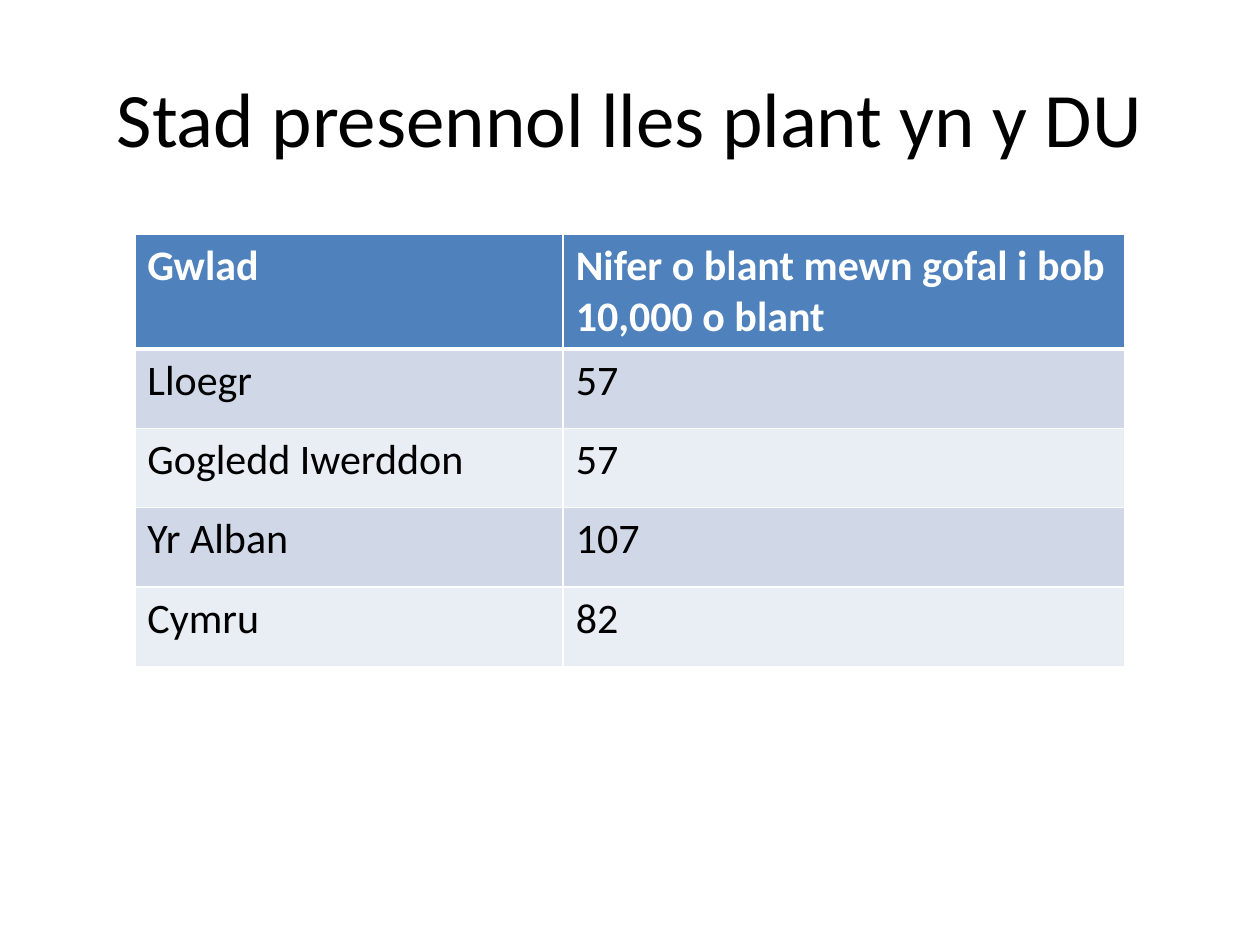
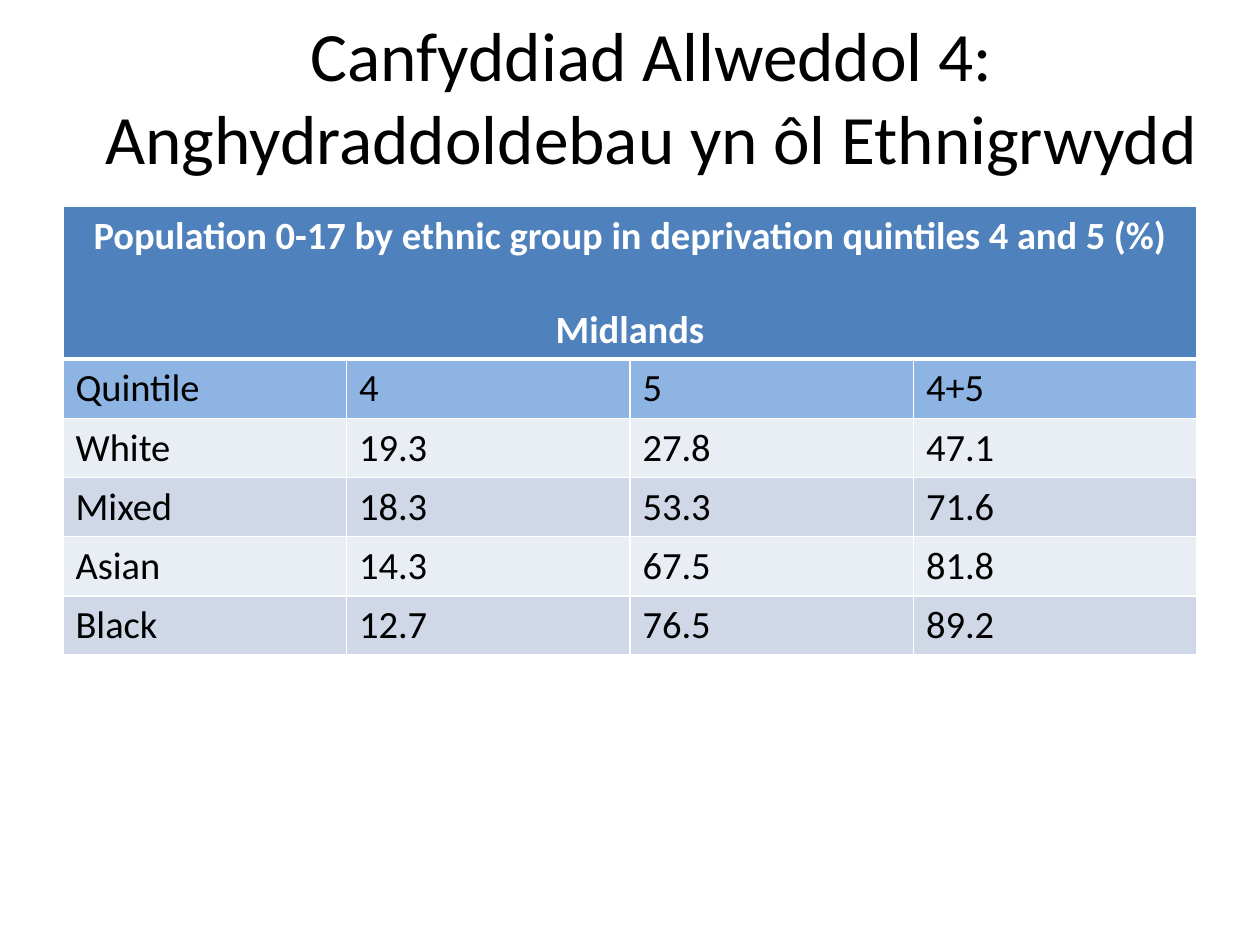
"""Build two slides that each hold a title and a banded table."""
import pptx
import pptx.dml.color
import pptx.enum.text
import pptx.util
from lxml import etree
from pptx.oxml.ns import qn

Inches = pptx.util.Inches
Pt = pptx.util.Pt
ALIGN = pptx.enum.text.PP_ALIGN
FONT = "Calibri"
HUES = {
    "text": "000000",
    "white": "FFFFFF",
    "head": "4F81BD",
    "sub": "8EB4E3",
    "dark": "D0D8E8",
    "light": "E9EDF4",
}


def color(name):
    return pptx.dml.color.RGBColor.from_string(HUES[name])


def add_run(para, text, size, hue="text", bold=False):
    run = para.add_run()
    run.text = text
    run.font.name = FONT
    run.font.size = Pt(size)
    run.font.bold = bold
    run.font.color.rgb = color(hue)


def add_title(slide, text, left, top, size):
    box = slide.shapes.add_textbox(Inches(left), Inches(top), Inches(9), Inches(1.25))
    frame = box.text_frame
    frame.word_wrap = True
    frame.vertical_anchor = pptx.enum.text.MSO_ANCHOR.MIDDLE
    para = frame.paragraphs[0]
    para.alignment = ALIGN.CENTER
    add_run(para, text, size)


def add_edges(cell, row):
    props = cell._tc.get_or_add_tcPr()
    widths = {"L": 1, "R": 1, "T": 3 if row == 1 else 1, "B": 3 if row == 0 else 1}
    for side, width in widths.items():
        line = etree.SubElement(props, qn(f"a:ln{side}"), w=str(Pt(width)))
        fill = etree.SubElement(line, qn("a:solidFill"))
        etree.SubElement(fill, qn("a:srgbClr"), val=HUES["white"])


def add_grid(slide, left, top, cols, heights, rows, fills, size):
    """Add a table with one fill per row and return it."""
    shape = slide.shapes.add_table(
        len(rows), len(cols), Inches(left), Inches(top),
        Inches(sum(cols)), Inches(sum(heights)))
    table = shape.table
    for col, width in zip(table.columns, cols):
        col.width = Inches(width)
    for r, (texts, fill) in enumerate(zip(rows, fills)):
        table.rows[r].height = Inches(heights[r])
        for c in range(len(cols)):
            cell = table.cell(r, c)
            add_edges(cell, r)
            cell.fill.solid()
            cell.fill.fore_color.rgb = color(fill)
            if c < len(texts):
                hue = "white" if r == 0 else "text"
                add_run(cell.text_frame.paragraphs[0], texts[c], size, hue, r == 0)
    return table


def add_state(slide):
    add_title(slide, "Stad presennol lles plant yn y DU", 0.5, 0.3, 44)
    rows = [
        ("Gwlad", "Nifer o blant mewn gofal i bob 10,000 o blant"),
        ("Lloegr", "57"),
        ("Gogledd Iwerddon", "57"),
        ("Yr Alban", "107"),
        ("Cymru", "82"),
    ]
    fills = ["head"] + ["dark", "light"] * 2
    add_grid(slide, 1.07, 1.86, [3.4, 4.46], [0.91] + [0.63] * 4, rows, fills, 24)


def add_ethnic(slide):
    add_title(slide, "Canfyddiad Allweddol 4: Anghydraddoldebau yn ôl Ethnigrwydd",
              0.67, 0.13, 39.6)
    rows = [
        ("Population 0-17 by ethnic group in deprivation quintiles 4 and 5 (%)",),
        ("Quintile", "4", "5", "4+5"),
        ("White", "19.3", "27.8", "47.1"),
        ("Mixed", "18.3", "53.3", "71.6"),
        ("Asian", "14.3", "67.5", "81.8"),
        ("Black", "12.7", "76.5", "89.2"),
    ]
    fills = ["head", "sub"] + ["light", "dark"] * 2
    table = add_grid(slide, 0.5, 1.64, [2.25] * 4, [1.21] + [0.47] * 5, rows, fills, 22)
    head = table.cell(0, 0)
    head.merge(table.cell(0, 3))
    area = head.text_frame.add_paragraph()
    area.space_before = Pt(26.8)
    add_run(area, "Midlands", 22, "white", True)
    for para in head.text_frame.paragraphs:
        para.alignment = ALIGN.CENTER


def main():
    deck = pptx.Presentation()
    deck.slide_width = Inches(10)
    deck.slide_height = Inches(7.5)
    for build in (add_state, add_ethnic):
        build(deck.slides.add_slide(deck.slide_layouts[6]))
    deck.save("out.pptx")


if __name__ == "__main__":
    main()
